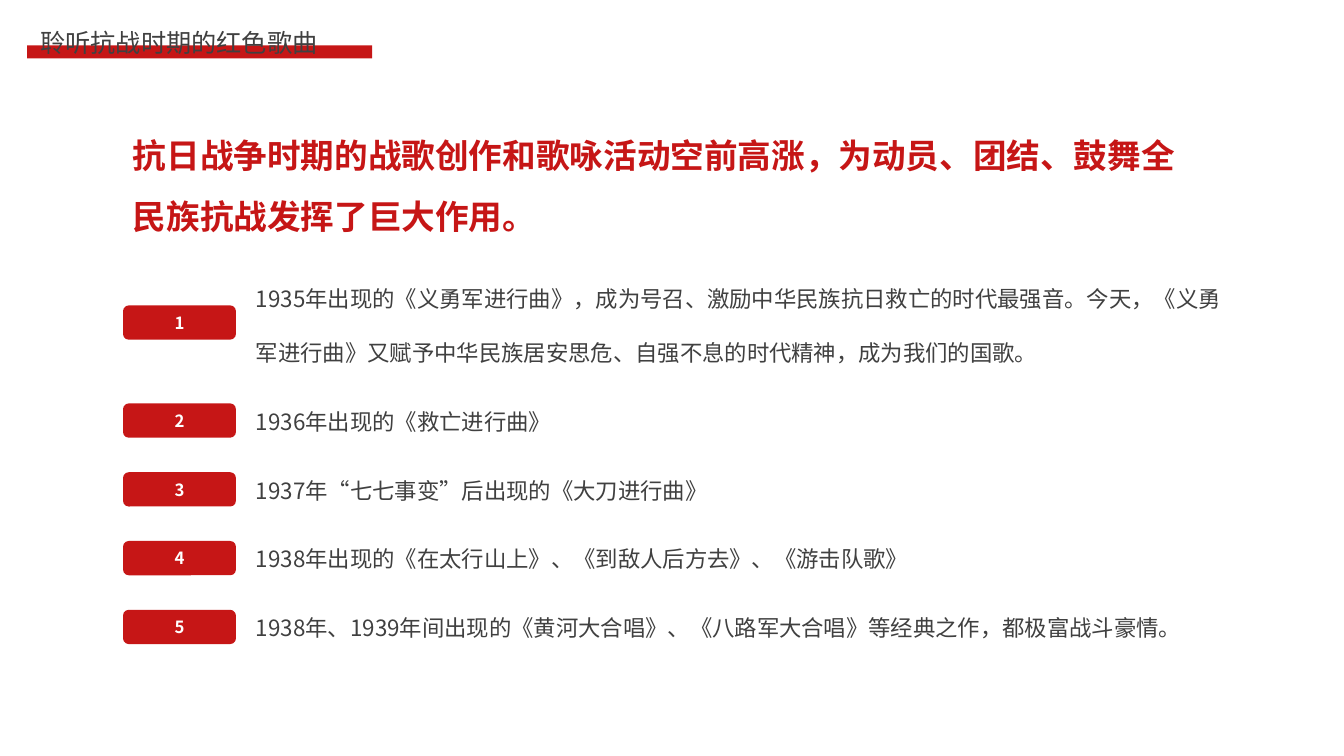
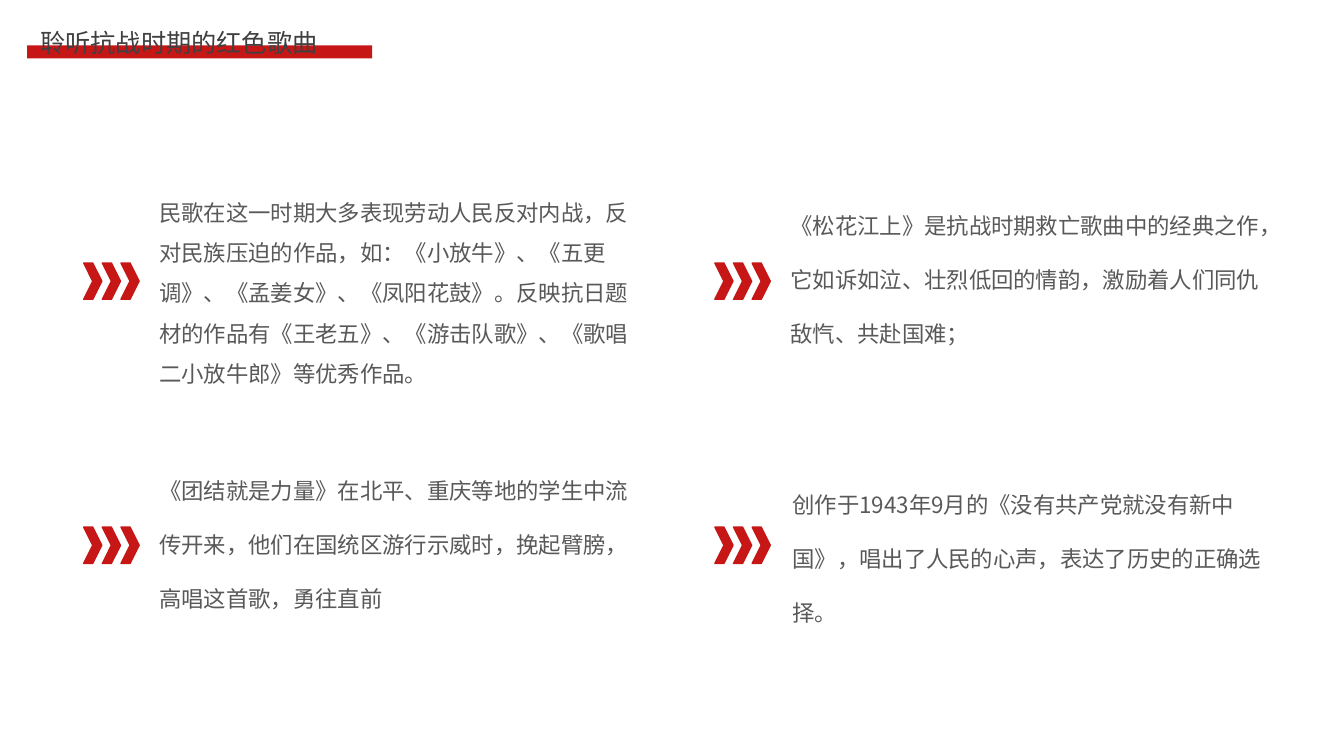
from lxml import etree
from pptx import Presentation
from pptx.dml.color import RGBColor
from pptx.enum.shapes import MSO_SHAPE
from pptx.enum.text import MSO_ANCHOR, MSO_AUTO_SIZE, PP_ALIGN
from pptx.oxml.ns import qn
from pptx.util import Pt

RECT, ROUND_RECT, CHEVRON = MSO_SHAPE.RECTANGLE, MSO_SHAPE.ROUNDED_RECTANGLE, MSO_SHAPE.CHEVRON
TOP, MIDDLE, BOTTOM = MSO_ANCHOR.TOP, MSO_ANCHOR.MIDDLE, MSO_ANCHOR.BOTTOM
LEFT, CENTER, JUSTIFY = PP_ALIGN.LEFT, PP_ALIGN.CENTER, PP_ALIGN.JUSTIFY
NO_AUTOFIT = MSO_AUTO_SIZE.NONE

FONT = "Noto Sans CJK SC"
RED, DARK, GREY, WHITE = "C61616", "404040", "595959", "FFFFFF"
TITLE_ONLY = 5
EMU_PER_PX = 9144  # 100 px to the inch

TITLE = "聆听抗战时期的红色歌曲"
HEADLINE = "抗日战争时期的战歌创作和歌咏活动空前高涨，为动员、团结、鼓舞全民族抗战发挥了巨大作用。"

# Text height, badge offset from the top of the text, text
SONGS = [
    (115, 50, "1935年出现的《义勇军进行曲》，成为号召、激励中华民族抗日救亡的时代最强音。"
              "今天，《义勇军进行曲》又赋予中华民族居安思危、自强不息的时代精神，成为我们的国歌。"),
    (45, 9, "1936年出现的《救亡进行曲》"),
    (45, 9, "1937年“七七事变”后出现的《大刀进行曲》"),
    (45, 9, "1938年出现的《在太行山上》、《到敌人后方去》、《游击队歌》"),
    (45, 9, "1938年、1939年间出现的《黄河大合唱》、《八路军大合唱》等经典之作，都极富战斗豪情。"),
]

# Text left, text top, text height, line spacing, text; two to a row
NOTES = [
    (158, 184, 197, 1.5, "民歌在这一时期大多表现劳动人民反对内战，反对民族压迫的作品，如：《小放牛》、《五更调》、"
                         "《孟姜女》、《凤阳花鼓》。反映抗日题材的作品有《王老五》、《游击队歌》、"
                         "《歌唱二小放牛郎》等优秀作品。"),
    (784, 184, 153, 2.0, "《松花江上》是抗战时期救亡歌曲中的经典之作，它如诉如泣、壮烈低回的情韵，"
                         "激励着人们同仇敌忾、共赴国难；"),
    (158, 447, 153, 2.0, "《团结就是力量》在北平、重庆等地的学生中流传开来，他们在国统区游行示威时，"
                         "挽起臂膀，高唱这首歌，勇往直前"),
    (786, 461, 153, 2.0, "创作于1943年9月的《没有共产党就没有新中国》，唱出了人民的心声，表达了历史的正确选择。"),
]


def px(*lengths):
    return [n * EMU_PER_PX for n in lengths]


def rgb(color):
    return RGBColor.from_string(color)


def write(shape, text, size, color, bold=False, align=LEFT, anchor=TOP, spacing=None):
    tf = shape.text_frame
    tf.text = text
    tf.word_wrap = True
    tf.auto_size = NO_AUTOFIT
    tf.vertical_anchor = anchor
    p = tf.paragraphs[0]
    p.alignment = align
    p.line_spacing = spacing
    r = p.runs[0]
    r.font.size = Pt(size)
    r.font.bold = bold
    r.font.color.rgb = rgb(color)
    r.font.name = FONT
    r_pr = r.font._element
    r_pr.set("lang", "zh-CN")
    etree.SubElement(r_pr, qn("a:ea")).set("typeface", FONT)


def add_text(s, box, text, size, color, **style):
    shape = s.shapes.add_textbox(*px(*box))
    write(shape, text, size, color, **style)
    return shape


def add_block(shapes, kind, box):
    """Add a red preset shape without outline or shadow."""
    shape = shapes.add_shape(kind, *px(*box))
    shape.shadow.inherit = False
    shape.fill.solid()
    shape.fill.fore_color.rgb = rgb(RED)
    shape.line.fill.background()
    return shape


def add_titled_slide(prs):
    """Add a slide with the common title over its red band."""
    s = prs.slides.add_slide(prs.slide_layouts[TITLE_ONLY])
    title = s.shapes.title
    title.left, title.top, title.width, title.height = px(30, 22, 338, 40)
    write(title, TITLE, 18, DARK, align=JUSTIFY)
    band = add_block(s.shapes, RECT, (27, 45, 342, 13))
    title._element.addprevious(band._element)
    return s


def add_song_row(s, left, bottom, number, height, badge_drop, text):
    top = bottom - height
    badge = add_block(s.shapes, ROUND_RECT, (left, top + badge_drop, 112, 34))
    write(badge, str(number), 12, WHITE, bold=True, align=CENTER, anchor=MIDDLE)
    add_text(s, (left + 122, top, 995, height), text, 16, DARK, anchor=BOTTOM, spacing=2.0)


def add_arrows(s, left, top):
    group = s.shapes.add_group_shape()
    for i in range(3):
        chevron = add_block(group.shapes, CHEVRON, (left + i * 18.5, top, 18, 36))
        chevron.line.color.rgb = rgb(RED)
        chevron.line.width = Pt(1)


def add_note(s, box, spacing, text):
    tf = add_text(s, box, text, 16, GREY, spacing=spacing).text_frame
    tf.margin_left = tf.margin_top = tf.margin_right = tf.margin_bottom = 0


def build_songs_slide(prs):
    s = add_titled_slide(prs)
    add_text(s, (122, 109, 1066, 124), HEADLINE, 24, RED, bold=True, spacing=1.5)
    for i, song in enumerate(SONGS):
        add_song_row(s, 122, 368 + 68.25 * i, i + 1, *song)


def build_notes_slide(prs):
    s = add_titled_slide(prs)
    for i, (left, top, height, spacing, text) in enumerate(NOTES):
        row, col = divmod(i, 2)
        add_arrows(s, 83 + 626 * col, 261 + 262 * row)
        add_note(s, (left, top, 473, height), spacing, text)


def main():
    prs = Presentation()
    prs.slide_width, prs.slide_height = px(1333, 750)
    build_songs_slide(prs)
    build_notes_slide(prs)
    prs.save("out.pptx")


if __name__ == "__main__":
    main()
